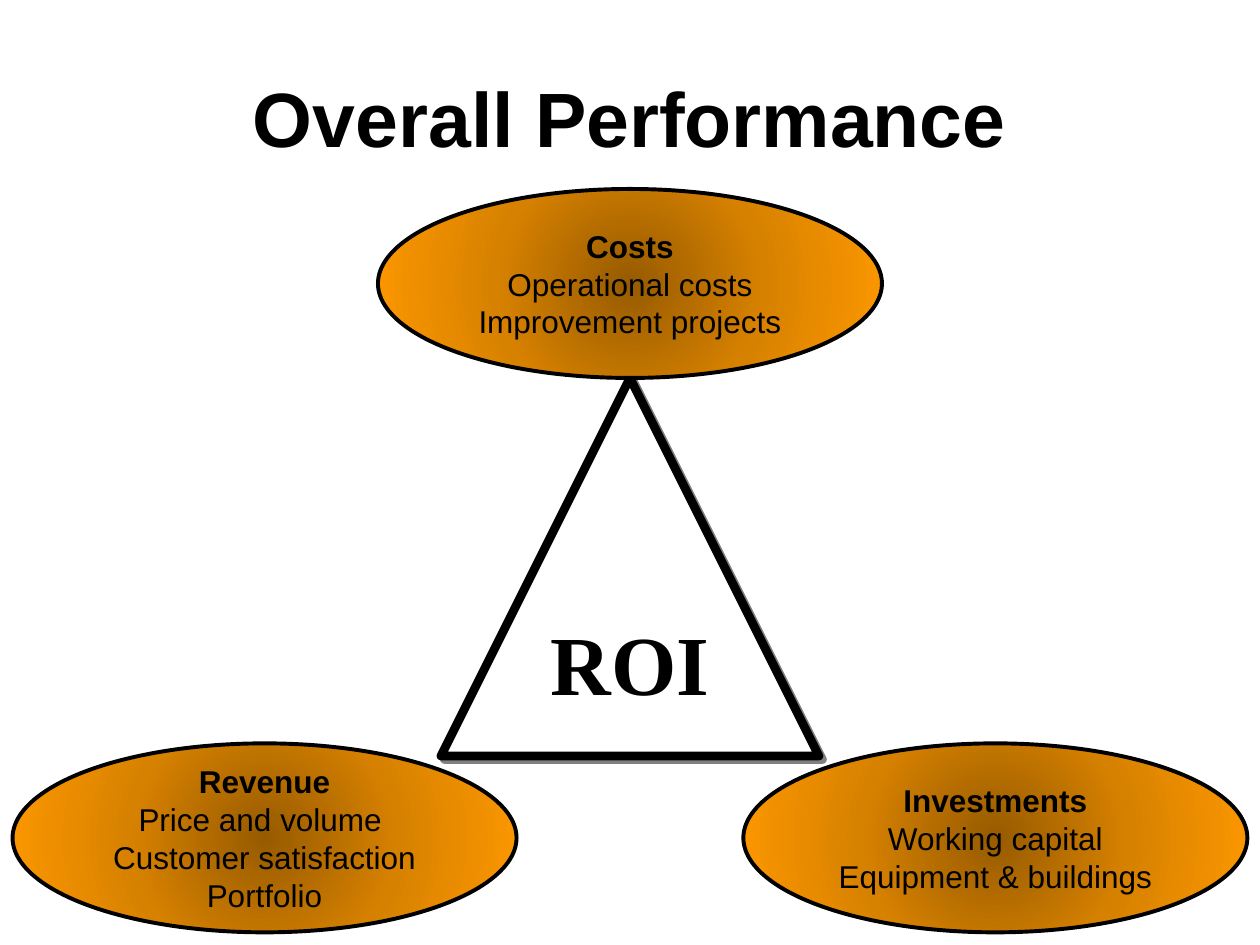
from pptx import Presentation
from pptx.dml.color import RGBColor
from pptx.enum.shapes import MSO_SHAPE
from pptx.enum.text import MSO_ANCHOR, PP_ALIGN
from pptx.oxml import parse_xml
from pptx.oxml.ns import nsdecls
from pptx.util import Inches, Pt

OVAL, TRIANGLE = MSO_SHAPE.OVAL, MSO_SHAPE.ISOSCELES_TRIANGLE
MIDDLE, CENTER = MSO_ANCHOR.MIDDLE, PP_ALIGN.CENTER
BLACK = RGBColor(0x00, 0x00, 0x00)
WHITE = RGBColor(0xFF, 0xFF, 0xFF)
GREY = RGBColor(0x80, 0x80, 0x80)
BROWN = RGBColor(0x97, 0x5B, 0x00)
AMBER = RGBColor(0xD7, 0x81, 0x00)
ORANGE = RGBColor(0xFF, 0x99, 0x00)
GLOW = ((0, BROWN), (50, AMBER), (100, ORANGE))
TITLE_ONLY = 5
COLS, ROWS = 100, 75
OVAL_SIZE = (40, 15)
FACTORS = (
    ((1, 59), ("Revenue", "Price and volume ", "Customer satisfaction", "Portfolio")),
    ((30, 15), ("Costs", "Operational costs", "Improvement projects")),
    ((59, 59), ("Investments", "Working capital", "Equipment & buildings")),
)


class Deck:
    """Style and current slide, measured on a grid of 100 columns by 75 rows."""

    def __init__(self, font="Arial"):
        self.prs = Presentation()
        self.prs.slide_width, self.prs.slide_height = Inches(10), Inches(7.5)
        self.font = font
        self.s = self.prs.slides.add_slide(self.prs.slide_layouts[TITLE_ONLY])

    def box(self, col, row, cols, rows):
        """Turn grid units into left, top, width and height."""
        w, h = self.prs.slide_width / COLS, self.prs.slide_height / ROWS
        return [round(n) for n in (w * col, h * row, w * cols, h * rows)]

    def add_text(self, p, text, size, bold=True, font=None):
        """Add one centred run to a paragraph."""
        p.alignment = CENTER
        r = p.add_run()
        r.text = text
        r.font.name, r.font.size, r.font.bold = font or self.font, Pt(size), bold
        r.font.color.rgb = BLACK

    def title(self, text, *area):
        """Place and fill the title placeholder."""
        sp = self.s.shapes.title
        sp.left, sp.top, sp.width, sp.height = self.box(*area)
        sp.text_frame.vertical_anchor = MIDDLE
        self.add_text(sp.text_frame.paragraphs[0], text, 44)

    def shape(self, kind, area, weight):
        """Add an outlined shape with middle-anchored text."""
        sp = self.s.shapes.add_shape(kind, *self.box(*area))
        sp.line.color.rgb, sp.line.width = BLACK, Pt(weight)
        sp.shadow.inherit = False
        sp.text_frame.vertical_anchor = MIDDLE
        return sp

    def triangle(self, text, *area):
        """Add the white triangle with its hard grey shadow."""
        sp = self.shape(TRIANGLE, area, 5)
        sp.fill.solid()
        sp.fill.fore_color.rgb = WHITE
        sp._element.spPr.find("{*}effectLst").append(parse_xml(
            f'<a:outerShdw {nsdecls("a")} dist="{Pt(2.8)}" dir="2700000" algn="ctr" '
            f'rotWithShape="0"><a:srgbClr val="{GREY}"/></a:outerShdw>'))
        sp.text_frame.word_wrap = False
        self.add_text(sp.text_frame.paragraphs[0], text, 48, font="Times New Roman")

    def oval(self, lines, *area):
        """Add a glowing oval with a bold heading over plain lines."""
        sp = self.shape(OVAL, area, 2.25)
        stops = "".join(f'<a:gs pos="{pos * 1000}"><a:srgbClr val="{color}"/></a:gs>'
                        for pos, color in GLOW)
        sp._element.spPr.find("{*}prstGeom").addnext(parse_xml(
            f'<a:gradFill {nsdecls("a")} rotWithShape="0"><a:gsLst>{stops}</a:gsLst>'
            '<a:path path="circle"><a:fillToRect l="50000" t="50000" r="50000" b="50000"/>'
            '</a:path></a:gradFill>'))
        tf = sp.text_frame
        tf.margin_left = tf.margin_right = 0
        for i, line in enumerate(lines):
            p = tf.add_paragraph() if i else tf.paragraphs[0]
            self.add_text(p, line, 18, bold=i == 0)


def main():
    """Build the slide and save it."""
    deck = Deck()
    deck.triangle("ROI", 35, 30, 30, 30)
    for corner, lines in FACTORS:
        deck.oval(lines, *corner, *OVAL_SIZE)
    deck.title("Overall Performance", 5, 3, 90, 12.5)
    deck.prs.save("out.pptx")


if __name__ == "__main__":
    main()
